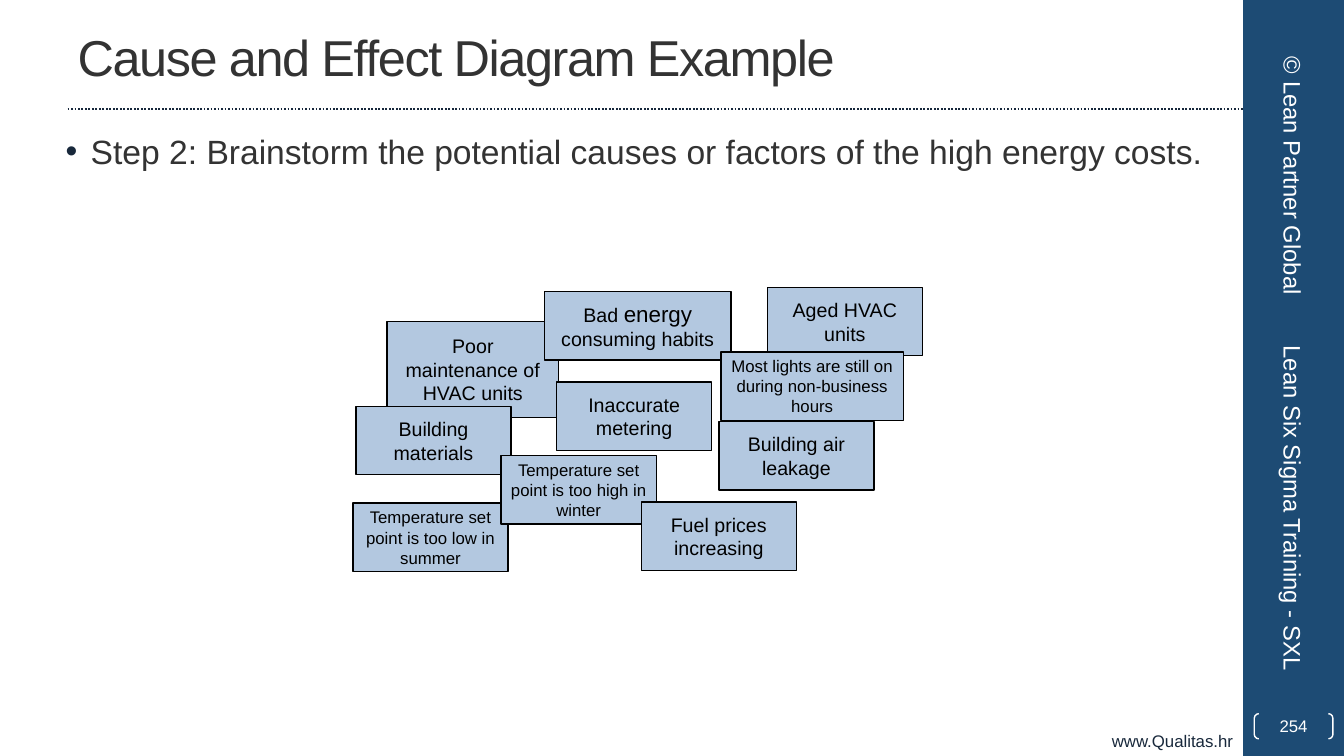
from lxml.etree import SubElement
from pptx import Presentation
from pptx.dml.color import RGBColor
from pptx.enum.dml import MSO_LINE_DASH_STYLE as Dash
from pptx.enum.shapes import MSO_CONNECTOR as Connector, MSO_SHAPE as Shape
from pptx.enum.text import MSO_ANCHOR as Anchor, MSO_AUTO_SIZE as AutoSize, PP_ALIGN as Align
from pptx.oxml.ns import qn
from pptx.util import Inches, Pt

TITLE = "Cause and Effect Diagram Example"
STEP = "Step 2: Brainstorm the potential causes or factors of the high energy costs."
WEBSITE = "www.Qualitas.hr"
PAGE_NUMBER = "254"
SIDE_LABELS = [
    ("© Lean Partner Global", (11.24, 1.48, 3.17, 0.53), Align.CENTER),
    ("Lean Six Sigma Training - SXL", (10.99, 4.9, 3.67, 0.53), Align.LEFT),
]
NOTE_SIZE = (1.54, 0.68)
CAUSES = [
    ([("Aged HVAC units", "note")], (7.61, 2.85), NOTE_SIZE),
    ([("Poor maintenance of HVAC units", "note")], (3.84, 3.19), (1.7, 0.95)),
    ([("Bad ", "note"), ("energy", "note_large"), (" consuming habits", "note")],
     (5.4, 2.89), (1.85, 0.68)),
    ([("Inaccurate metering", "note")], (5.52, 3.79), NOTE_SIZE),
    ([("Building materials", "note")], (3.53, 4.03), NOTE_SIZE),
    ([("Temperature set point is too low in summer", "note_small")], (3.5, 4.99), NOTE_SIZE),
    ([("Temperature set point is too high in winter", "note_small")], (4.97, 4.52), NOTE_SIZE),
    ([("Most lights are still on during non-business hours", "note_small")],
     (7.15, 3.49), (1.81, 0.68)),
    ([("Building air leakage", "note")], (7.13, 4.18), NOTE_SIZE),
    ([("Fuel prices increasing", "note")], (6.36, 4.98), NOTE_SIZE),
]

PAGE_WIDTH, PAGE_HEIGHT = 13.33, 7.5
BAND_WIDTH = 1
BAND_LEFT = PAGE_WIDTH - BAND_WIDTH
RULE_LEFT, RULE_TOP = 0.67, 1.08
BRACKET_WIDTH, BRACKET_HEIGHT = 0.78, 0.25

THEME = {
    "font": "Arial",
    "band": "1D4B74", "rule": "17273B", "bullet": "18283B",
    "note_fill": "B3C8E0", "note_line": "000000", "bracket": "FFFFFF",
    "text": {
        "title": (36, "333333"), "body": (24, "333333"),
        "website": (12, "18283B"), "number": (12, "FFFFFF"), "side": (17, "FFFFFF"),
        "note": (14, "000000"), "note_large": (16, "000000"), "note_small": (12, "000000"),
    },
}


def color(name):
    return RGBColor.from_string(THEME[name])


def set_all(target, values):
    for name, value in values.items():
        setattr(target, name, value)


def inches(*lengths):
    return [Inches(length) for length in lengths]


def write(box, spans, align=Align.LEFT, anchor=Anchor.TOP, **frame_format):
    frame = box.text_frame
    set_all(frame, {"word_wrap": True, "auto_size": AutoSize.NONE,
                    "vertical_anchor": anchor, **frame_format})
    para = frame.paragraphs[0]
    set_all(para, {"alignment": align, "space_before": Pt(0)})
    for text, style in spans:
        size, ink = THEME["text"][style]
        span = para.add_run()
        span.text = text
        set_all(span.font, {"name": THEME["font"], "size": Pt(size)})
        span.font.color.rgb = RGBColor.from_string(ink)
    return para


def draw(shapes, kind, place, fill=None, line=None):
    shape = shapes.add_shape(kind, *inches(*place))
    shape.shadow.inherit = False
    if fill:
        shape.fill.solid()
        shape.fill.fore_color.rgb = color(fill)
    else:
        shape.fill.background()
    if line:
        shape.line.width = Pt(1)
        shape.line.color.rgb = color(line)
    else:
        shape.line.fill.background()
    return shape


def place_holder(box, place):
    set_all(box, dict(zip(("left", "top", "width", "height"), inches(*place))))


def add_bullet(para):
    properties = para._p.get_or_add_pPr()
    set_all_xml = {"marL": Inches(0.38), "indent": Inches(-0.25)}
    for name, value in set_all_xml.items():
        properties.set(name, str(value))
    tint = SubElement(properties, qn("a:buClr"))
    SubElement(tint, qn("a:srgbClr"), val=THEME["bullet"])
    SubElement(properties, qn("a:buFont"), typeface=THEME["font"])
    SubElement(properties, qn("a:buChar"), char="•")


def add_frame(page):
    shapes = page.shapes
    draw(shapes, Shape.RECTANGLE, (BAND_LEFT, 0, BAND_WIDTH, PAGE_HEIGHT), "band")

    website = shapes.add_textbox(*inches(0, 7.2, BAND_LEFT, 0.3))
    write(website, [(WEBSITE, "website")], Align.RIGHT)

    rule = shapes.add_connector(
        Connector.STRAIGHT, *inches(RULE_LEFT, RULE_TOP, BAND_LEFT, RULE_TOP))
    set_all(rule.line, {"width": Pt(1.25), "dash_style": Dash.ROUND_DOT})
    rule.line.color.rgb = color("rule")
    SubElement(rule._element.spPr, qn("a:effectLst"))

    bracket_left = BAND_LEFT + (BAND_WIDTH - BRACKET_WIDTH) / 2
    bracket = draw(shapes, Shape.DOUBLE_BRACKET,
                   (bracket_left, 7.08, BRACKET_WIDTH, BRACKET_HEIGHT), line="bracket")
    bracket.adjustments[0] = 0.18
    margins = dict.fromkeys(("margin_left", "margin_top", "margin_right", "margin_bottom"), 0)
    write(bracket, [(PAGE_NUMBER, "number")], Align.CENTER, Anchor.MIDDLE, **margins)

    for text, place, align in SIDE_LABELS:
        label = shapes.add_textbox(*inches(*place))
        label.rotation = 90
        write(label, [(text, "side")], align, Anchor.MIDDLE)


def add_heading(page):
    title, body = page.shapes.title, page.placeholders[1]
    place_holder(title, (RULE_LEFT, 0.03, 11.11, 1.05))
    para = write(title, [(TITLE, "title")], anchor=Anchor.MIDDLE)
    para.runs[0]._r.get_or_add_rPr().set("spc", "-100")
    place_holder(body, (0.42, 1.25, 11.78, 6))
    add_bullet(write(body, [(STEP, "body")]))


def add_causes(page):
    group = page.shapes.add_group_shape()
    for spans, position, size in CAUSES:
        note = draw(group.shapes, Shape.RECTANGLE, position + size, "note_fill", "note_line")
        write(note, spans, Align.CENTER, Anchor.MIDDLE)


def main():
    deck = Presentation()
    set_all(deck, {"slide_width": Inches(PAGE_WIDTH), "slide_height": Inches(PAGE_HEIGHT)})
    page = deck.slides.add_slide(deck.slide_layouts[1])
    add_heading(page)
    add_frame(page)
    add_causes(page)
    deck.save("out.pptx")


if __name__ == "__main__":
    main()
